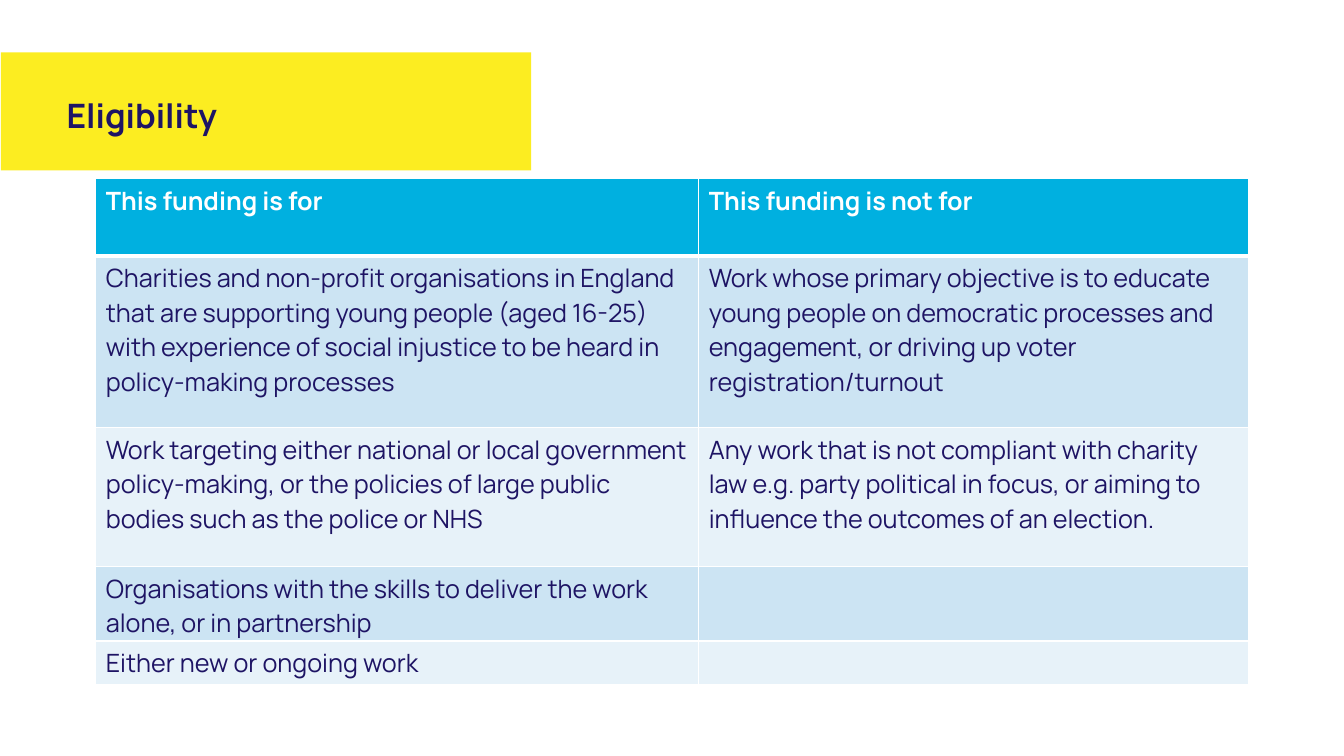
import pptx
import pptx.dml.color
import pptx.enum.shapes
import pptx.enum.text
import pptx.oxml
import pptx.oxml.ns
import pptx.util
from pptx.util import Inches

RGBColor = pptx.dml.color.RGBColor
YELLOW = RGBColor(0xFC, 0xED, 0x21)
NAVY = RGBColor(0x1E, 0x14, 0x64)
CYAN = RGBColor(0x00, 0xB0, 0xE0)
BLUE_TINT = RGBColor(0xCC, 0xE4, 0xF3)
PALE_TINT = RGBColor(0xE7, 0xF2, 0xF9)
WHITE = RGBColor(0xFF, 0xFF, 0xFF)


def format_font(font, size, color, bold):
    font.color.rgb = color
    values = {"name": "Manrope", "size": pptx.util.Pt(size), "bold": bold}
    for name, value in values.items():
        setattr(font, name, value)


def add_border(cell, side, points):
    border = pptx.oxml.parse_xml(
        f'<a:{side} {pptx.oxml.ns.nsdecls("a")} w="{pptx.util.Pt(points)}">'
        f'<a:solidFill><a:srgbClr val="{WHITE}"/></a:solidFill></a:{side}>'
    )
    properties = cell._tc.get_or_add_tcPr()
    properties.insert(len(properties) - 1, border)


presentation = pptx.Presentation()
presentation.slide_width = Inches(13.33)
presentation.slide_height = Inches(7.5)
slide = presentation.slides.add_slide(presentation.slide_layouts[5])

heading = slide.shapes.title
heading_place = {
    "left": Inches(0.56),
    "top": Inches(0.89),
    "width": Inches(6.1),
    "height": Inches(0.5),
}
for name, value in heading_place.items():
    setattr(heading, name, value)
heading.text_frame.text = "Eligibility"
heading.text_frame.vertical_anchor = pptx.enum.text.MSO_ANCHOR.MIDDLE
heading_line = heading.text_frame.paragraphs[0]
heading_line.alignment = pptx.enum.text.PP_ALIGN.LEFT
format_font(heading_line.runs[0].font, 24, NAVY, True)

heading_band = slide.shapes.add_shape(
    pptx.enum.shapes.MSO_SHAPE.RECTANGLE,
    Inches(0.01), Inches(0.52), Inches(5.26), Inches(1.17),
)
heading_band.shadow.inherit = False
heading_band.fill.solid()
heading_band.fill.fore_color.rgb = YELLOW
heading_band.line.fill.background()
heading.element.addprevious(heading_band.element)

criteria = [
    ("This funding is for", "This funding is not for"),
    (
        "Charities and non-profit organisations in England that are supporting "
        "young people (aged 16-25) with experience of social injustice to be "
        "heard in policy-making processes",
        "Work whose primary objective is to educate young people on democratic "
        "processes and engagement, or driving up voter registration/turnout",
    ),
    (
        "Work targeting either national or local government policy-making, or "
        "the policies of large public bodies such as the police or NHS",
        "Any work that is not compliant with charity law e.g. party political "
        "in focus, or aiming to influence the outcomes of an election.",
    ),
    ("Organisations with the skills to deliver the work alone, or in partnership", ""),
    ("Either new or ongoing work", ""),
]
column_widths = [5.98, 5.45]
row_heights = [0.77, 1.7, 1.38, 0.74, 0.43]
row_fills = [CYAN, BLUE_TINT, PALE_TINT, BLUE_TINT, PALE_TINT]

eligibility = slide.shapes.add_table(
    len(criteria), len(column_widths),
    Inches(0.95), Inches(1.77), Inches(sum(column_widths)), Inches(sum(row_heights)),
).table
for column, width in zip(eligibility.columns, column_widths):
    column.width = Inches(width)

for row_index, statements in enumerate(criteria):
    row = eligibility.rows[row_index]
    row.height = Inches(row_heights[row_index])
    is_header = row_index == 0
    for cell, statement in zip(row.cells, statements):
        cell.margin_bottom = 0
        cell.fill.solid()
        cell.fill.fore_color.rgb = row_fills[row_index]
        border_widths = {
            "lnL": 1,
            "lnR": 1,
            "lnT": 3 if row_index == 1 else 1,
            "lnB": 3 if is_header else 1,
        }
        for side, points in border_widths.items():
            add_border(cell, side, points)
        if statement:
            cell.text = statement
            run = cell.text_frame.paragraphs[0].runs[0]
            format_font(run.font, 18, WHITE if is_header else NAVY, is_header)

presentation.save("out.pptx")
